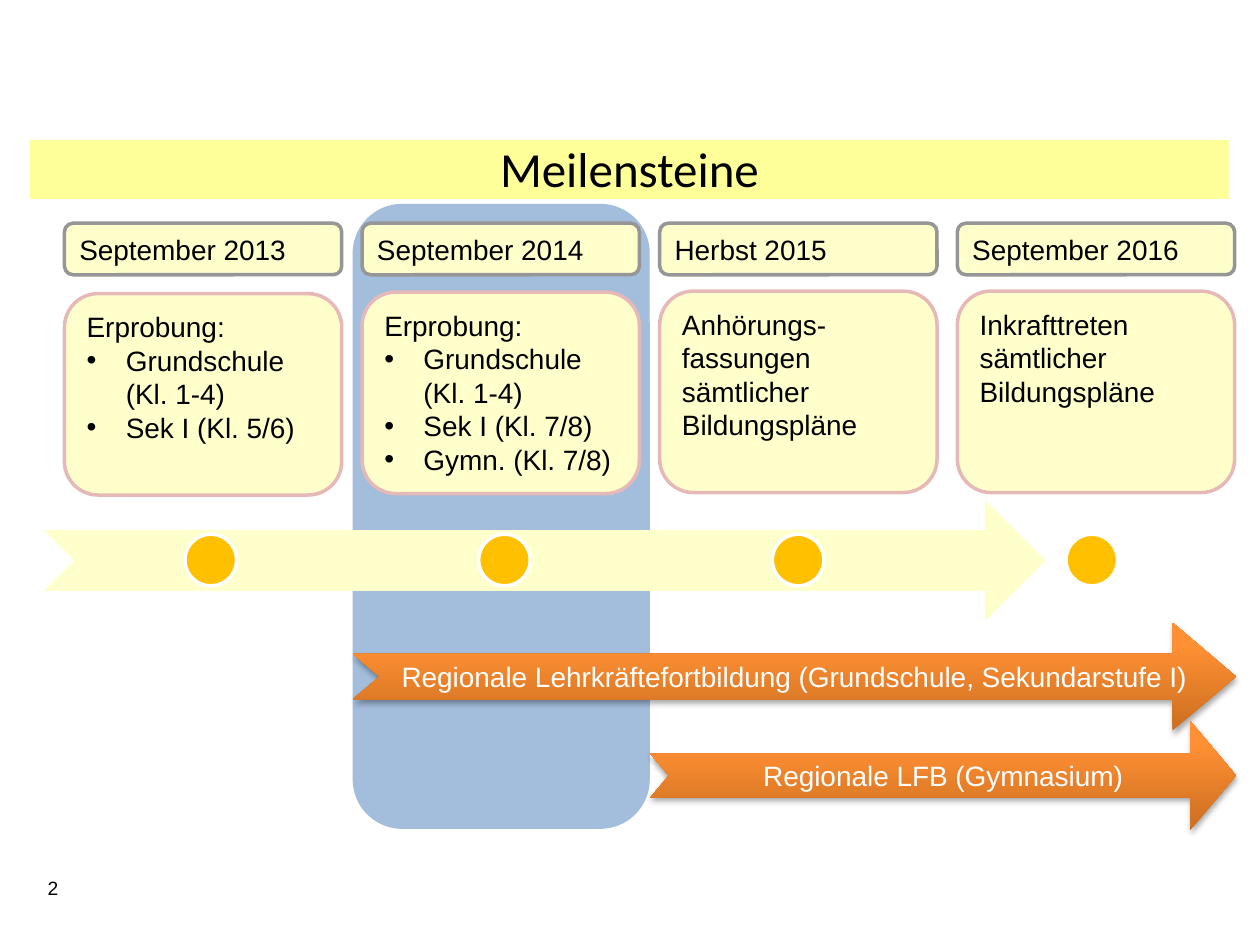
from dataclasses import dataclass

from lxml import etree
from pptx import Presentation
from pptx.dml.color import RGBColor
from pptx.enum.shapes import MSO_SHAPE
from pptx.enum.text import MSO_ANCHOR, PP_ALIGN
from pptx.oxml import parse_xml
from pptx.oxml.ns import qn
from pptx.util import Cm, Pt

RECT, ROUND = MSO_SHAPE.RECTANGLE, MSO_SHAPE.ROUNDED_RECTANGLE
ARROW, OVAL = MSO_SHAPE.NOTCHED_RIGHT_ARROW, MSO_SHAPE.OVAL
LEFT, CENTER = PP_ALIGN.LEFT, PP_ALIGN.CENTER
TOP, MIDDLE = MSO_ANCHOR.TOP, MSO_ANCHOR.MIDDLE
DRAW_NS = "http://schemas.openxmlformats.org/drawingml/2006/main"


@dataclass(frozen=True)
class Theme:
    strip: str = "FFFF99"
    cream: str = "FFFFCC"
    panel: str = "4F81BD"
    gold: str = "FFC000"
    gray: str = "969696"
    rose: str = "E6B9B8"
    white: str = "FFFFFF"
    black: str = "000000"
    ramp: tuple = ((0, "CC6E20"), (80, "FF9034"), (100, "FF9136"))
    head: str = "Calibri"
    body: str = "Arial"
    title: int = 28
    text: int = 16
    small: int = 11
    line: int = 2
    indent: float = 0.79


@dataclass(frozen=True)
class Box:
    x: float
    y: float
    w: float
    h: float

    def place(self) -> tuple:
        return tuple(Cm(v) for v in (self.x, self.y, self.w, self.h))


@dataclass(frozen=True)
class Line:
    text: str
    inset: bool = False
    dot: bool = False


@dataclass(frozen=True)
class Stage:
    date: str
    top: float
    lines: tuple


@dataclass(frozen=True)
class Course:
    box: Box
    adjust: tuple
    text: str


THEME = Theme()

STAGES = (
    Stage("September 2013", 5.92, (
        Line("Erprobung:"), Line("Grundschule", True, True),
        Line("(Kl. 1-4)", True), Line("Sek I (Kl. 5/6)", True, True))),
    Stage("September 2014", 5.89, (
        Line("Erprobung:"), Line("Grundschule (Kl. 1-4)", True, True),
        Line("Sek I (Kl. 7/8)", True, True),
        Line("Gymn. (Kl. 7/8)", True, True))),
    Stage("Herbst 2015", 5.87, (
        Line("Anhörungs-fassungen sämtlicher Bildungspläne"),)),
    Stage("September 2016", 5.87, (
        Line("Inkrafttreten sämtlicher Bildungspläne"),)),
)

COURSES = (
    Course(Box(7.11, 12.55, 17.81, 2.18), (0.42, 0.59),
           "Regionale Lehrkräftefortbildung (Grundschule, Sekundarstufe I)"),
    Course(Box(13.11, 14.53, 11.81, 2.21), (0.4, 0.42),
           "Regionale LFB (Gymnasium)"),
)


def write(shape, lines: tuple, align=LEFT, anchor=MIDDLE, size: int = THEME.text,
          name: str = THEME.body, color: str = THEME.black) -> None:
    frame = shape.text_frame
    for key, value in {"word_wrap": True, "vertical_anchor": anchor}.items():
        setattr(frame, key, value)
    for i, line in enumerate(lines):
        para = frame.paragraphs[0] if i == 0 else frame.add_paragraph()
        para.alignment = align
        run = para.add_run()
        run.text = line.text
        for key, value in {"name": name, "size": Pt(size)}.items():
            setattr(run.font, key, value)
        run.font.color.rgb = RGBColor.from_string(color)
        if line.inset:
            props = para._p.get_or_add_pPr()
            props.set("marL", str(Cm(THEME.indent)))
            props.set("indent", str(-Cm(THEME.indent) if line.dot else 0))
            if line.dot:
                etree.SubElement(props, qn("a:buFont")).set("typeface", "Arial")
                etree.SubElement(props, qn("a:buChar")).set("char", "•")


def draw(slide, kind, box: Box, fill: str, edge: str = ""):
    shape = slide.shapes.add_shape(kind, *box.place())
    shape.shadow.inherit = False
    shape.fill.solid()
    shape.fill.fore_color.rgb = RGBColor.from_string(fill)
    if edge:
        shape.line.color.rgb = RGBColor.from_string(edge)
        shape.line.width = Pt(THEME.line)
    else:
        shape.line.fill.background()
    return shape


def label(slide, box: Box, text: str, **style) -> None:
    write(slide.shapes.add_textbox(*box.place()), (Line(text),), **style)


def fade(shape, share: int) -> None:
    color = shape._element.spPr.find(".//" + qn("a:srgbClr"))
    etree.SubElement(color, qn("a:alpha")).set("val", str(share * 1000))


def shade(shape) -> None:
    """Give the shape an upward colour ramp and a soft shadow below."""
    props = shape._element.spPr
    stops = "".join(f'<a:gs pos="{p * 1000}"><a:srgbClr val="{c}"/></a:gs>'
                    for p, c in THEME.ramp)
    ramp = parse_xml(f'<a:gradFill xmlns:a="{DRAW_NS}" rotWithShape="1">'
                     f'<a:gsLst>{stops}</a:gsLst>'
                     '<a:lin ang="16200000" scaled="0"/></a:gradFill>')
    props.replace(props.find(qn("a:solidFill")), ramp)
    glow = parse_xml(f'<a:outerShdw xmlns:a="{DRAW_NS}" blurRad="{Pt(3.1)}" '
                     f'dist="{Pt(1.8)}" dir="5400000" rotWithShape="0">'
                     f'<a:srgbClr val="{THEME.black}"><a:alpha val="35000"/>'
                     '</a:srgbClr></a:outerShdw>')
    props.find(qn("a:effectLst")).append(glow)


def main() -> None:
    deck = Presentation()
    deck.slide_width, deck.slide_height = Cm(25.4), Cm(19.05)
    slide = deck.slides.add_slide(deck.slide_layouts[6])

    # Title strip and highlighted period
    draw(slide, RECT, Box(0.61, 2.82, 24.16, 1.19), THEME.strip)
    fade(draw(slide, ROUND, Box(7.11, 4.11, 5.99, 12.6), THEME.panel), 52)
    label(slide, Box(0.61, 2.67, 24.16, 1.45), "Meilensteine", align=CENTER,
          size=THEME.title, name=THEME.head)

    # Training courses
    for course in COURSES:
        arrow = draw(slide, ARROW, course.box, THEME.cream)
        for i, value in enumerate(course.adjust):
            arrow.adjustments[i] = value
        shade(arrow)
        write(arrow, (Line(course.text),), CENTER, color=THEME.white)

    # Time line with its milestones
    draw(slide, ARROW, Box(0.89, 10.08, 20.19, 2.44), THEME.cream)
    for i, stage in enumerate(STAGES):
        draw(slide, OVAL, Box(3.73 + 5.92 * i, 10.77, 1.04, 1.04),
             THEME.gold, THEME.white)
        left = 1.3 + 6 * i
        date = draw(slide, ROUND, Box(left, 4.5, 5.59, 1.04),
                    THEME.cream, THEME.gray)
        write(date, (Line(stage.date),))
        card = draw(slide, ROUND, Box(left, stage.top, 5.59, 4.06),
                    THEME.cream, THEME.rose)
        write(card, stage.lines, anchor=TOP)

    # Page number
    label(slide, Box(0.71, 17.53, 1.4, 0.74), "2", size=THEME.small)
    deck.save("out.pptx")


if __name__ == "__main__":
    main()
